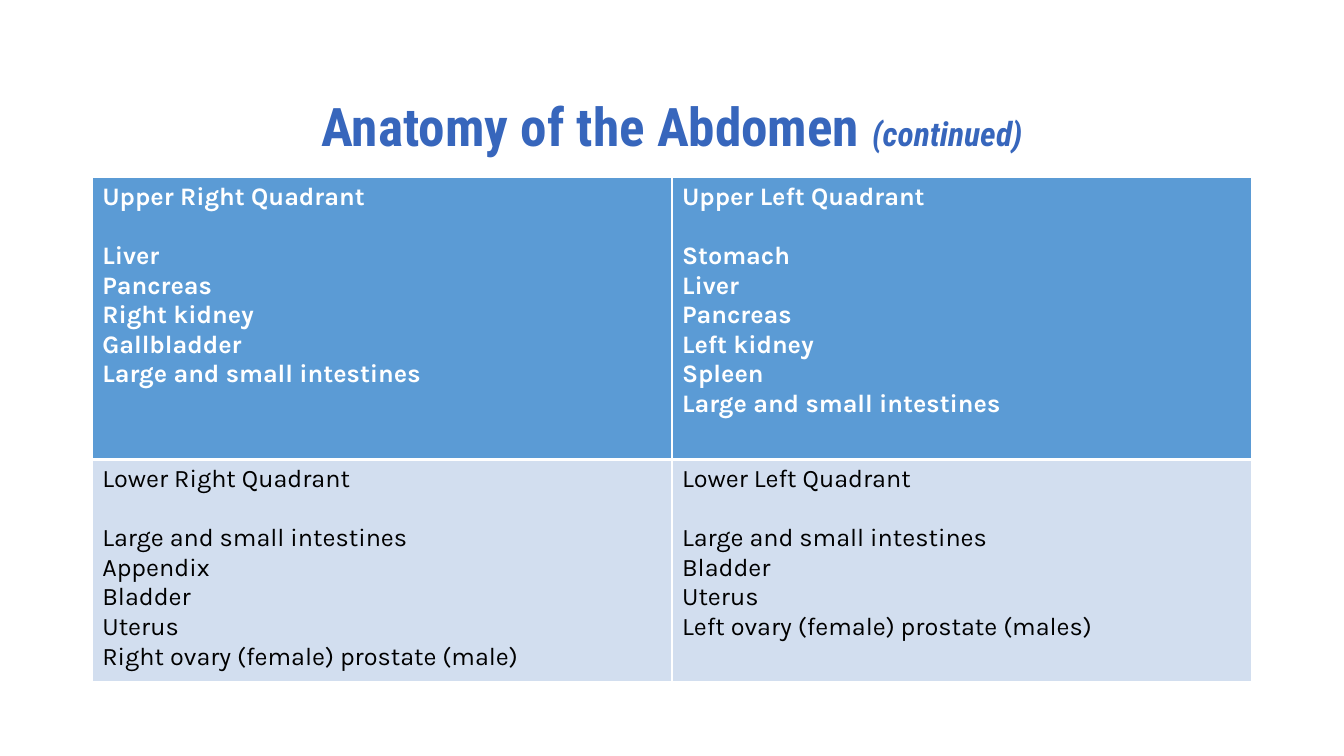
from dataclasses import dataclass

from lxml.etree import SubElement
from pptx import Presentation
from pptx.dml.color import RGBColor
from pptx.enum.text import MSO_ANCHOR as Anchor, PP_ALIGN as Align
from pptx.oxml.ns import qn
from pptx.util import Inches, Pt

TITLE = [("Anatomy of the Abdomen ", "title"), ("(continued)", "note")]
QUADRANTS = [
    [
        ("Upper Right Quadrant",
         ["Liver", "Pancreas", "Right kidney", "Gallbladder", "Large and small intestines"]),
        ("Upper Left Quadrant",
         ["Stomach", "Liver", "Pancreas", "Left kidney", "Spleen", "Large and small intestines"]),
    ],
    [
        ("Lower Right Quadrant",
         ["Large and small intestines", "Appendix", "Bladder", "Uterus",
          "Right ovary (female) prostate (male)"]),
        ("Lower Left Quadrant",
         ["Large and small intestines", "Bladder", "Uterus",
          "Left ovary (female) prostate (males)"]),
    ],
]


@dataclass(frozen=True)
class Theme:
    blue: str = "3766BC"
    white: str = "FFFFFF"
    black: str = "000000"
    upper: str = "5B9BD5"
    lower: str = "D2DEEF"
    heading_font: str = "Roboto Condensed"
    body_font: str = "Karla"
    title_size: int = 38
    note_size: int = 24
    body_size: int = 18
    heading_gap: int = 21
    thin: int = 1
    thick: int = 3


THEME = Theme()
WIDTH, HEIGHT = 13.33, 7.5
CONTENT_WIDTH = 11.5
LEFT = (WIDTH - CONTENT_WIDTH) / 2
TITLE_TOP, TITLE_HEIGHT = 1.06, 0.45
TABLE_TOP = 1.76
ROW_HEIGHTS = [2.8, 2.2]

HEADING = {"name": THEME.heading_font, "bold": True, "color": THEME.blue}
FORMATS = {
    "title": {**HEADING, "size": THEME.title_size},
    "note": {**HEADING, "size": THEME.note_size, "italic": True},
}
BODY = {"name": THEME.body_font, "size": THEME.body_size}
ROWS = [
    {"fill": THEME.upper, "font": {**BODY, "bold": True, "color": THEME.white},
     "borders": {"L": THEME.thin, "R": THEME.thin, "T": THEME.thin, "B": THEME.thick}},
    {"fill": THEME.lower, "font": {**BODY, "bold": False, "color": THEME.black},
     "borders": {"L": THEME.thin, "R": THEME.thin, "T": THEME.thick, "B": THEME.thin}},
]


def style_font(font, values):
    for name, value in values.items():
        if name == "color":
            font.color.rgb = RGBColor.from_string(value)
        else:
            setattr(font, name, Pt(value) if name == "size" else value)


def add_title(slide):
    shape = slide.shapes.add_textbox(
        *map(Inches, (LEFT, TITLE_TOP, CONTENT_WIDTH, TITLE_HEIGHT)))
    frame = shape.text_frame
    settings = {"word_wrap": True, "vertical_anchor": Anchor.MIDDLE, "margin_left": 0,
                "margin_right": 0, "margin_top": 0, "margin_bottom": 0}
    for name, value in settings.items():
        setattr(frame, name, value)
    paragraph = frame.paragraphs[0]
    paragraph.alignment = Align.CENTER
    paragraph.line_spacing = 0.9
    for text, role in TITLE:
        run = paragraph.add_run()
        run.text = text
        style_font(run.font, FORMATS[role])


def add_borders(cell, borders):
    properties = cell._tc.get_or_add_tcPr()
    for side, width in borders.items():
        line = SubElement(properties, qn(f"a:ln{side}"), w=str(Pt(width)))
        SubElement(SubElement(line, qn("a:solidFill")), qn("a:srgbClr"), val=THEME.white)


def fill_cell(cell, quadrant, look):
    add_borders(cell, look["borders"])
    cell.fill.solid()
    cell.fill.fore_color.rgb = RGBColor.from_string(look["fill"])
    heading, organs = quadrant
    frame = cell.text_frame
    for index, text in enumerate([heading, *organs]):
        paragraph = frame.add_paragraph() if index else frame.paragraphs[0]
        run = paragraph.add_run()
        run.text = text
        style_font(run.font, look["font"])
    frame.paragraphs[0].space_after = Pt(THEME.heading_gap)


def add_quadrants(slide):
    columns = len(QUADRANTS[0])
    table = slide.shapes.add_table(
        len(QUADRANTS), columns,
        *map(Inches, (LEFT, TABLE_TOP, CONTENT_WIDTH, sum(ROW_HEIGHTS)))).table
    for column in table.columns:
        column.width = Inches(CONTENT_WIDTH / columns)
    for index, (quadrants, look) in enumerate(zip(QUADRANTS, ROWS)):
        table.rows[index].height = Inches(ROW_HEIGHTS[index])
        for column, quadrant in enumerate(quadrants):
            fill_cell(table.cell(index, column), quadrant, look)


def main():
    presentation = Presentation()
    presentation.slide_width, presentation.slide_height = Inches(WIDTH), Inches(HEIGHT)
    slide = presentation.slides.add_slide(presentation.slide_layouts[6])
    add_title(slide)
    add_quadrants(slide)
    presentation.save("out.pptx")


if __name__ == "__main__":
    main()
